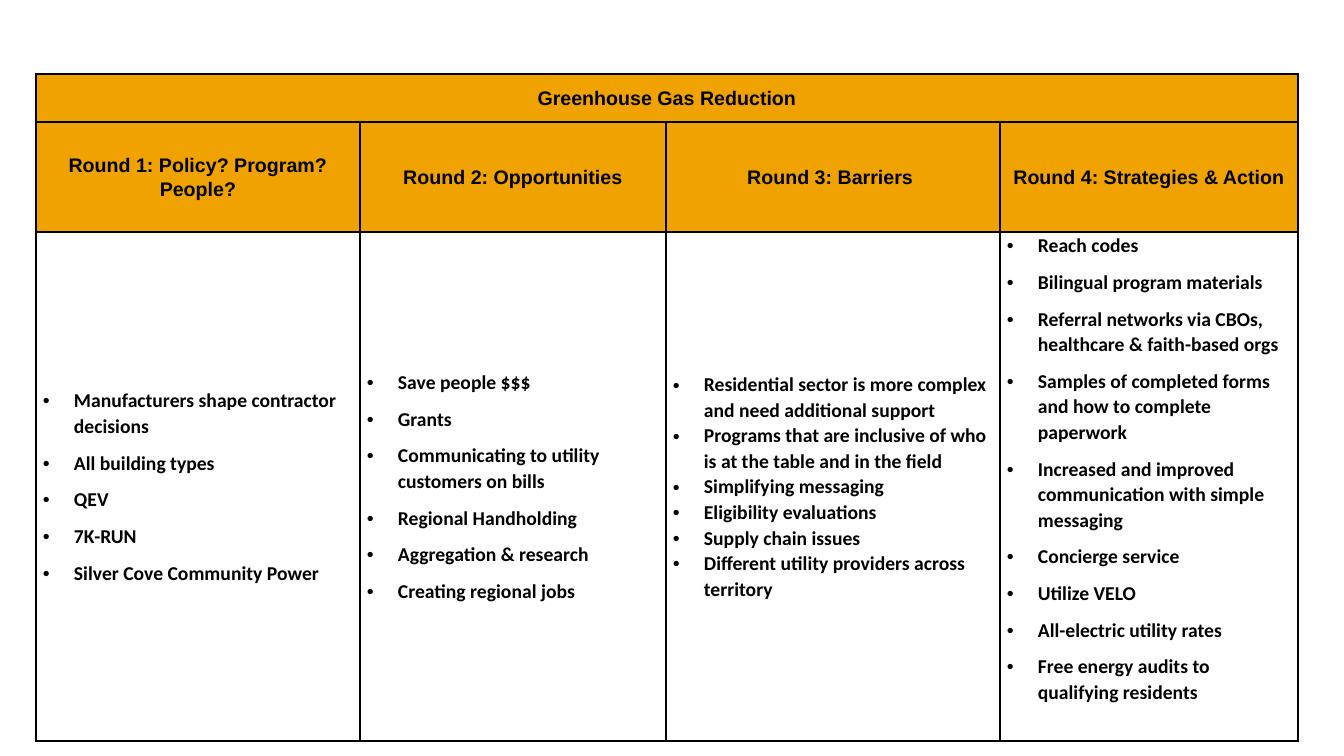
from dataclasses import dataclass

from lxml.etree import SubElement
from pptx import Presentation
from pptx.dml.color import RGBColor
from pptx.enum.text import MSO_ANCHOR, PP_ALIGN
from pptx.oxml import parse_xml
from pptx.oxml.ns import nsdecls, qn
from pptx.util import Emu, Pt


@dataclass(frozen=True)
class Theme:
    ink: str = "000000"
    gold: str = "EFA200"
    paper: str = "FFFFFF"
    head_font: str = "Arial"
    body_font: str = "Calibri"
    size: int = 14
    line: int = 1
    spacing: float = 1.07
    after: int = 8
    inset: int = 7
    indent: int = 31


def px(count):
    return Emu(round(count * 914400 / 100.8))


class Deck:
    def __init__(self, theme, width, height):
        self.theme = theme
        self.show = Presentation()
        self.show.slide_width, self.show.slide_height = px(width), px(height)
        self.slide = self.show.slides.add_slide(self.show.slide_layouts[6])

    def grid(self, left, top, widths, heights):
        frame = self.slide.shapes.add_table(
            len(heights), len(widths), px(left), px(top),
            px(sum(widths)), px(sum(heights)))
        table = frame.table
        table.first_row = table.horz_banding = False
        for column, width in zip(table.columns, widths):
            column.width = px(width)
        for row, height in zip(table.rows, heights):
            row.height = px(height)
        return table

    def cell(self, cell, fill, base=0):
        cell.fill.solid()
        cell.fill.fore_color.rgb = RGBColor.from_string(fill)
        cell.vertical_anchor = MSO_ANCHOR.MIDDLE
        cell.margin_left = cell.margin_right = px(self.theme.inset)
        cell.margin_top, cell.margin_bottom = 0, px(base)
        # Borders come before the fill in the cell's XML
        for place, side in enumerate("LRTB"):
            cell._tc.tcPr.insert(place, parse_xml(
                f'<a:ln{side} {nsdecls("a")} w="{Pt(self.theme.line)}">'
                f'<a:solidFill><a:srgbClr val="{self.theme.ink}"/></a:solidFill>'
                f'</a:ln{side}>'))

    def style(self, para, font, after):
        para.line_spacing = self.theme.spacing
        para.space_after = Pt(after)
        para.font.name = font
        para.font.size = Pt(self.theme.size)
        para.font.bold = True
        para.font.color.rgb = RGBColor.from_string(self.theme.ink)

    def head(self, cell, text):
        self.cell(cell, self.theme.gold)
        para = cell.text_frame.paragraphs[0]
        para.text = text
        para.alignment = PP_ALIGN.CENTER
        self.style(para, self.theme.head_font, self.theme.after)

    def bullets(self, cell, lines, after, base):
        self.cell(cell, self.theme.paper, base)
        cell.text = "\n".join(lines)
        for para in cell.text_frame.paragraphs:
            self.style(para, self.theme.body_font, after)
            props = para._p.get_or_add_pPr()
            props.set("marL", str(px(self.theme.indent)))
            props.set("indent", str(-px(self.theme.indent)))
            font = SubElement(props, qn("a:buFont"))
            font.set("typeface", self.theme.head_font)
            mark = SubElement(props, qn("a:buChar"))
            mark.set("char", "•")
            # Default run properties follow the bullet
            props.append(props.find(qn("a:defRPr")))


TITLE = "Greenhouse Gas Reduction"

# Each round: heading, column width, space after, bottom inset, points
ROUNDS = [
    ("Round 1: Policy? Program? People?", 324, Theme.after, 0, [
        "Manufacturers shape contractor decisions",
        "All building types",
        "QEV",
        "7K-RUN",
        "Silver Cove Community Power",
    ]),
    ("Round 2: Opportunities", 306, Theme.after, 0, [
        "Save people $$$",
        "Grants",
        "Communicating to utility customers on bills",
        "Regional Handholding",
        "Aggregation & research",
        "Creating regional jobs",
    ]),
    ("Round 3: Barriers ", 334, 0, 0, [
        "Residential sector is more complex and need additional support",
        "Programs that are inclusive of who is at the table and in the field",
        "Simplifying messaging",
        "Eligibility evaluations",
        "Supply chain issues",
        "Different utility providers across territory",
    ]),
    ("Round 4: Strategies & Action", 298, Theme.after, 36, [
        "Reach codes",
        "Bilingual program materials",
        "Referral networks via CBOs, healthcare & faith-based orgs",
        "Samples of completed forms and how to complete paperwork",
        "Increased and improved communication with simple messaging",
        "Concierge service",
        "Utilize VELO",
        "All-electric utility rates",
        "Free energy audits to qualifying residents",
    ]),
]


def main():
    deck = Deck(Theme(), 1344, 756)
    table = deck.grid(36, 74, [item[1] for item in ROUNDS], [48, 110, 509])

    # Title across all rounds
    for col in range(len(ROUNDS)):
        deck.head(table.cell(0, col), "" if col else TITLE)
    table.cell(0, 0).merge(table.cell(0, len(ROUNDS) - 1))

    # One column for each round
    for col, (name, _, after, base, lines) in enumerate(ROUNDS):
        deck.head(table.cell(1, col), name)
        deck.bullets(table.cell(2, col), lines, after, base)

    deck.show.save("out.pptx")


if __name__ == "__main__":
    main()
